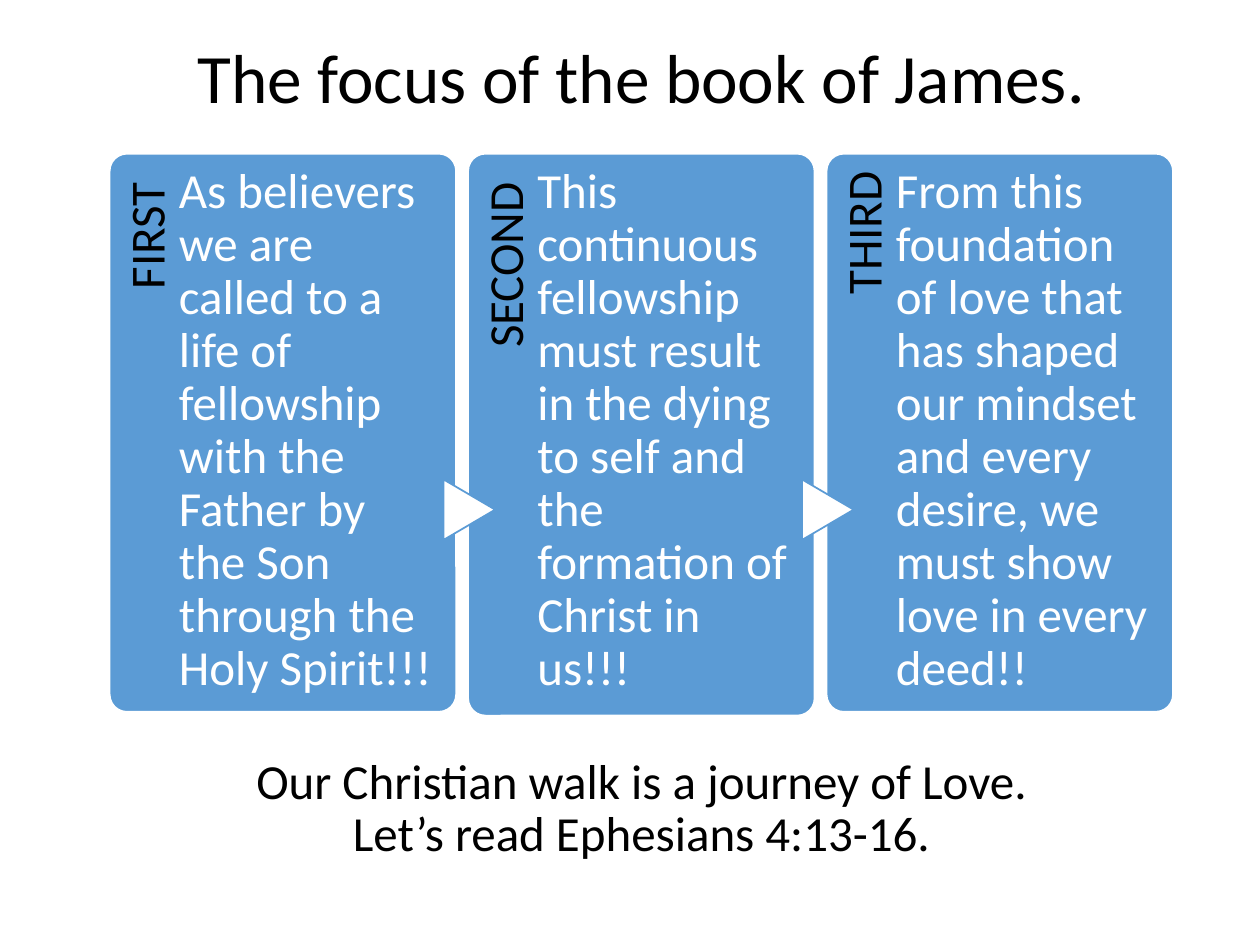
from pptx import Presentation
from pptx.dml.color import RGBColor
from pptx.enum.shapes import MSO_SHAPE
from pptx.enum.text import MSO_ANCHOR, PP_ALIGN
from pptx.util import Inches, Pt

BLUE, WHITE, BLACK = "5B9BD5", "FFFFFF", "000000"
FIRST_LEFT, PITCH = 0.87, 2.845
PANEL_TOP, PANEL_WIDTH = 1.22, 2.75
STEPS = [
    ("FIRST ", "As believers we are called to a life of fellowship with the "
     "Father by the Son through the Holy Spirit!!!", 4.43),
    ("SECOND ", "This continuous fellowship must result in the dying to self "
     "and the formation of Christ in us!!!", 4.46),
    ("THIRD", "From this foundation of love that has shaped our mindset and "
     "every desire, we must show love in every deed!!", 4.43),
]


def color(value):
    """Turn a hex string into a colour."""
    return RGBColor.from_string(value)


def add_text(slide, box, lines, ink, size=28, align=PP_ALIGN.LEFT,
             anchor=MSO_ANCHOR.TOP, insets=(0, 0.1, 0, 0)):
    """Add a wrapped text box with one paragraph per line."""
    text_box = slide.shapes.add_textbox(*map(Inches, box))
    frame = text_box.text_frame
    frame.word_wrap = True
    frame.vertical_anchor = anchor
    (frame.margin_left, frame.margin_top,
     frame.margin_right, frame.margin_bottom) = map(Inches, insets)
    frame.text = "\n".join(lines)
    for paragraph in frame.paragraphs:
        paragraph.alignment = align
        paragraph.line_spacing = 0.9
        paragraph.font.name = "Calibri"
        paragraph.font.size = Pt(size)
        paragraph.font.color.rgb = color(ink)
    return text_box


def add_heading(slide, box, lines, size):
    """Add centred black text across the slide."""
    add_text(slide, box, lines, BLACK, size, PP_ALIGN.CENTER,
             MSO_ANCHOR.MIDDLE, (0.1, 0.05, 0.1, 0.05))


def add_outlined(slide, kind, box, fill, line):
    """Add a filled preset shape with a thin outline."""
    shape = slide.shapes.add_shape(kind, *map(Inches, box))
    shape.shadow.inherit = False
    shape.fill.solid()
    shape.fill.fore_color.rgb = color(fill)
    shape.line.color.rgb = color(line)
    shape.line.width = Pt(1)
    return shape


def add_step(slide, index, label, body, height):
    """Add one panel with its upright label, arrow and text."""
    left = FIRST_LEFT + index * PITCH
    panel = add_outlined(slide, MSO_SHAPE.ROUNDED_RECTANGLE,
                         (left, PANEL_TOP, PANEL_WIDTH, height), BLUE, WHITE)
    panel.adjustments[0] = 0.05

    length, depth = height * 0.82, 0.55
    label_box = (left + (depth - length) / 2,
                 PANEL_TOP + (length - depth) / 2, length, depth)
    add_text(slide, label_box, [label], BLACK, align=PP_ALIGN.RIGHT,
             insets=(0, 0.1, 0.14, 0)).rotation = 270

    if index:
        add_outlined(slide, MSO_SHAPE.FLOWCHART_EXTRACT,
                     (left - 0.23, 3.84, 0.48, 0.41), WHITE, BLUE).rotation = 90
    add_text(slide, (left + depth, PANEL_TOP, 2.05, height), [body], WHITE)


def main():
    """Build and save the slide."""
    presentation = Presentation()
    presentation.slide_width = Inches(10)
    presentation.slide_height = Inches(7.5)
    slide = presentation.slides.add_slide(presentation.slide_layouts[6])

    add_heading(slide, (0.78, 0.36, 8.62, 0.57),
                ["The focus of the book of James."], 39.6)
    for index, step in enumerate(STEPS):
        add_step(slide, index, *step)
    add_heading(slide, (0.78, 5.97, 8.62, 0.91),
                ["Our Christian walk is a journey of Love.",
                 "Let’s read Ephesians 4:13-16."], 28)
    presentation.save("out.pptx")


if __name__ == "__main__":
    main()
